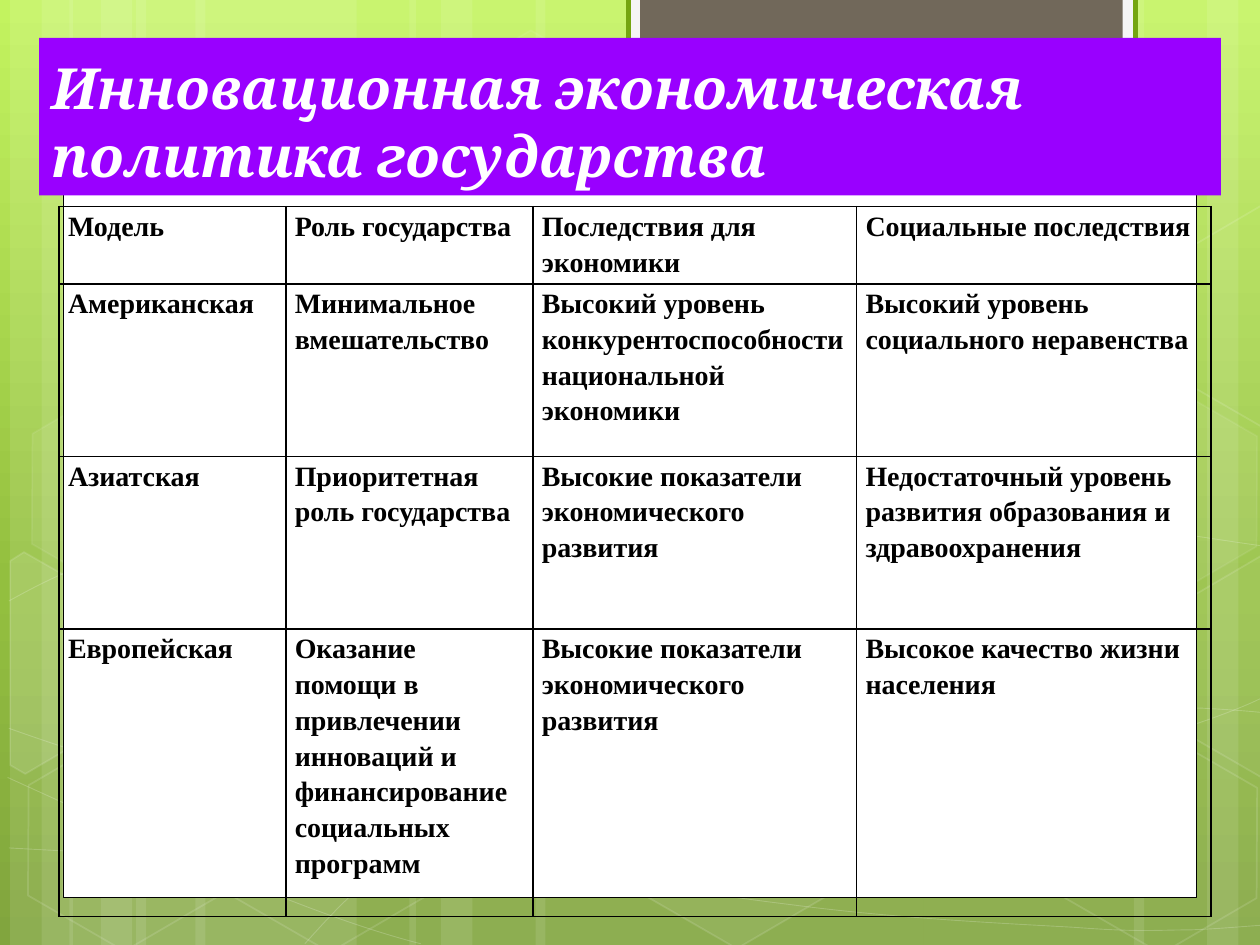
import math

import pptx
import pptx.util
import pptx.dml.color
import pptx.enum.shapes
import pptx.enum.text
import pptx.oxml
import pptx.oxml.ns

Inches = pptx.util.Inches
Pt = pptx.util.Pt
qn = pptx.oxml.ns.qn
SHAPES = pptx.enum.shapes.MSO_SHAPE

COLORS = {
    "white": "FFFFFF", "black": "000000", "title": "9900FF", "tab": "71685A",
    "tab_frame": "F5F5F5", "tab_line": "74A510",
}
GRADIENT = [(0, "C3F35F"), (62, "93BF3F"), (100, "81A53E")]

TITLE = "Инновационная экономическая политика государства"
ROWS = [
    ["Модель", "Роль государства", "Последствия для экономики", "Социальные последствия"],
    ["Американская", "Минимальное вмешательство",
     "Высокий уровень конкурентоспособности национальной экономики",
     "Высокий уровень социального неравенства"],
    ["Азиатская", "Приоритетная роль государства",
     "Высокие показатели экономического развития",
     "Недостаточный уровень развития образования и здравоохранения"],
    ["Европейская",
     "Оказание помощи в привлечении инноваций и финансирование социальных программ",
     "Высокие показатели экономического развития", "Высокое качество жизни населения"],
]
COLUMN_WIDTHS = [1.8, 1.96, 2.57, 2.81]
ROW_HEIGHTS = [0.61, 1.37, 1.37, 2.28]
CELL_MARGINS = {"margin_left": 0.07, "margin_right": 0.07, "margin_top": 0, "margin_bottom": 0}

STRIPS = [(1.08, 1.75), (0.08, 0.5), (0.33, 0.83), (1.55, 1.75), (0.55, 0.5), (0.8, 0.83),
          (7.33, 1.75), (9.58, 0.5), (9, 0.83), (4.25, 3.08), (3.25, 0.5), (3.5, 0.83)]
CURVES = [
    [(0.07, 6.73), (0.61, 6.76), (1.15, 6.79), (1.9, 6.78), (2.65, 6.77), (3.58, 6.75),
     (4.58, 6.65), (5.58, 6.55), (7, 6.36), (7.92, 6.17), (8.83, 5.98), (9.77, 5.68),
     (10.07, 5.51)],
    [(0.07, 4.77), (0.36, 4.61), (0.65, 4.46), (1.21, 4.31), (1.78, 4.16), (2.59, 3.94),
     (3.47, 3.87), (4.36, 3.8), (5.44, 3.79), (6.54, 3.87), (7.64, 3.95), (9.47, 4.26),
     (10.07, 4.34)],
    [(0.06, 6.17), (1.27, 6.72), (2.47, 7.27), (3.34, 7.49)],
    [(0.07, 5.78), (0.38, 5.89), (0.7, 6), (1.28, 6.16), (1.86, 6.31), (2.73, 6.56),
     (3.57, 6.73), (4.4, 6.9), (5.45, 7.08), (6.28, 7.18), (7.11, 7.29), (8, 7.33),
     (8.53, 7.36), (9.05, 7.4), (9.19, 7.38), (9.45, 7.38), (9.71, 7.37), (9.89, 7.35),
     (10.07, 7.34)],
    [(2.42, 7.49), (2.6, 7.29), (2.78, 7.09), (3.02, 6.91), (3.26, 6.73), (3.6, 6.53),
     (3.88, 6.39), (4.16, 6.25), (4.33, 6.19), (4.7, 6.09), (5.06, 5.99), (5.73, 5.85),
     (6.08, 5.78), (6.44, 5.71), (6.49, 5.71), (6.8, 5.69), (7.11, 5.66), (7.6, 5.63),
     (7.94, 5.62), (8.29, 5.61), (8.86, 5.62), (8.86, 5.62), (9.08, 5.62), (9.3, 5.62),
     (9.53, 5.62), (9.71, 5.63), (9.88, 5.64), (10.06, 5.66)],
]
HEXAGONS = [(3.34, 0.36, 4, 8), (4.97, 5.89, 6, 12), (0.11, 5.91, 0, 12),
            (0.14, 3.12, 7, 8), (1.74, 5.92, 0, 12), (7.53, 4.53, 10, 12),
            (8.34, 5.93, 0, 12), (8.34, 3.14, 7, 8)]
CUT_HEXAGONS = [
    ((0.36, 5.35), 10,
     [(0.08, 4.45), (0.19, 4.38), (0.96, 4.82), (0.95, 5.7), (0.2, 6.14), (0.08, 6.07)]),
    ((9.85, 5.2), 4,
     [(9.26, 4.85), (10.01, 4.41), (10.09, 4.46), (10.09, 6.13), (10.02, 6.17), (9.26, 5.73)]),
    ((9.85, 2.41), 0,
     [(9.26, 2.07), (10.01, 1.63), (10.1, 1.68), (10.09, 3.35), (10.02, 3.39), (9.26, 2.95)]),
]
TILT = 30


def rgb(name):
    return pptx.dml.color.RGBColor.from_string(COLORS[name])


def paint(fill, color, opacity=100):
    if color is None or opacity == 0:
        fill.background()
        return
    fill.solid()
    fill.fore_color.rgb = rgb(color)
    if opacity < 100:
        element = fill._xPr.find(".//" + qn("a:srgbClr"))
        element.append(element.makeelement(qn("a:alpha"), {"val": str(opacity * 1000)}))


def style(shape, fill, opacity=100, line=None, width=1, line_opacity=100):
    shape.shadow.inherit = False
    paint(shape.fill, fill, opacity)
    paint(shape.line.fill, line, line_opacity)
    if line:
        shape.line.width = Pt(width)


def add_box(parent, kind, box, **look):
    shape = parent.shapes.add_shape(kind, *map(Inches, box))
    style(shape, **look)
    return shape


def add_outline(parent, points, closed, **look):
    corners = [(Inches(x), Inches(y)) for x, y in points]
    builder = parent.shapes.build_freeform(*corners[0], scale=1)
    builder.add_line_segments(corners[1:], close=closed)
    shape = builder.convert_to_shape()
    style(shape, **look)
    return shape


def bend(shape):
    lines = list(shape._element.iter(qn("a:lnTo")))
    for start in range(0, len(lines), 3):
        curve = lines[start].makeelement(qn("a:cubicBezTo"), {})
        lines[start].addprevious(curve)
        for line in lines[start:start + 3]:
            curve.append(line[0])
            line.getparent().remove(line)


def turn(point, center, degrees):
    cosine, sine = math.cos(math.radians(degrees)), math.sin(math.radians(degrees))
    x, y = point[0] - center[0], point[1] - center[1]
    return center[0] + x * cosine - y * sine, center[1] + x * sine + y * cosine


def write(paragraph, text, name, size, color, italic=False):
    run = paragraph.add_run()
    run.text = text
    values = {"name": name, "size": Pt(size), "bold": True, "italic": italic}
    for attribute, value in values.items():
        setattr(run.font, attribute, value)
    run.font.color.rgb = rgb(color)


def set_background(slide):
    fill = slide.background.fill
    fill.gradient()
    fill.gradient_angle = 270
    stops = fill._xPr.find(".//" + qn("a:gsLst"))
    for stop in list(stops):
        stops.remove(stop)
    for position, color in GRADIENT:
        stops.append(pptx.oxml.parse_xml(
            f'<a:gs {pptx.oxml.ns.nsdecls("a")} pos="{position * 1000}">'
            f'<a:srgbClr val="{color}"/></a:gs>'))


def add_decoration(slide):
    group = slide.shapes.add_group_shape()
    for left, width in STRIPS:
        add_box(group, SHAPES.RECTANGLE, (left, 0, width, 7.5), fill="white", opacity=10)
    for controls in CURVES:
        bend(add_outline(group, controls, False, fill=None,
                         line="white", width=0.5, line_opacity=20))
    for left, top, opacity, line_opacity in HEXAGONS:
        hexagon = add_box(group, SHAPES.HEXAGON, (left, top, 1.75, 1.52), fill="white",
                          opacity=opacity, line="white", line_opacity=line_opacity)
        hexagon.adjustments[0] = 0.285
        hexagon.rotation = TILT
    for center, opacity, points in CUT_HEXAGONS:
        upright = [turn(point, center, -TILT) for point in points]
        outline = add_outline(group, upright, True, fill="white", opacity=opacity,
                              line="white", line_opacity=12)
        outline.rotation = TILT
    add_box(slide, SHAPES.RECTANGLE, (0.5, 0.36, 9, 6.76), fill="white", line="black", width=0.5)
    add_box(slide, SHAPES.RECTANGLE, (4.99, -0.02, 4.02, 0.76), fill="tab_frame",
            line="tab_line", width=3)
    add_box(slide, SHAPES.RECTANGLE, (5.08, -0.02, 3.83, 0.68), fill="tab")


def add_title(slide):
    title = slide.shapes.add_textbox(*map(Inches, (0.31, 0.3, 9.38, 1.25)))
    paint(title.fill, "title")
    title.text_frame.word_wrap = True
    title.text_frame.vertical_anchor = pptx.enum.text.MSO_ANCHOR.BOTTOM
    write(title.text_frame.paragraphs[0], TITLE, "Cambria", 32.4, "white", italic=True)


def add_model_table(slide):
    box = (0.47, 1.64, sum(COLUMN_WIDTHS), sum(ROW_HEIGHTS))
    table = slide.shapes.add_table(len(ROWS), len(COLUMN_WIDTHS), *map(Inches, box)).table
    table.first_row = table.horz_banding = False
    for column, width in zip(table.columns, COLUMN_WIDTHS):
        column.width = Inches(width)
    for row, height, texts in zip(table.rows, ROW_HEIGHTS, ROWS):
        row.height = Inches(height)
        for cell, text in zip(row.cells, texts):
            for attribute, value in CELL_MARGINS.items():
                setattr(cell, attribute, Inches(value))
            paragraph = cell.text_frame.paragraphs[0]
            paragraph.line_spacing = 1.15
            paragraph.space_after = Pt(10)
            write(paragraph, text, "Times New Roman", 16, "black")
            properties = cell._tc.get_or_add_tcPr()
            for side in ("lnL", "lnR", "lnT", "lnB"):
                properties.append(pptx.oxml.parse_xml(
                    f'<a:{side} {pptx.oxml.ns.nsdecls("a")} w="{Pt(1)}"><a:solidFill>'
                    f'<a:srgbClr val="{COLORS["black"]}"/></a:solidFill></a:{side}>'))
            cell.fill.background()


def main():
    presentation = pptx.Presentation()
    presentation.slide_width, presentation.slide_height = Inches(10), Inches(7.5)
    slide = presentation.slides.add_slide(presentation.slide_layouts[6])
    set_background(slide)
    add_decoration(slide)
    add_title(slide)
    add_model_table(slide)
    presentation.save("out.pptx")


if __name__ == "__main__":
    main()
